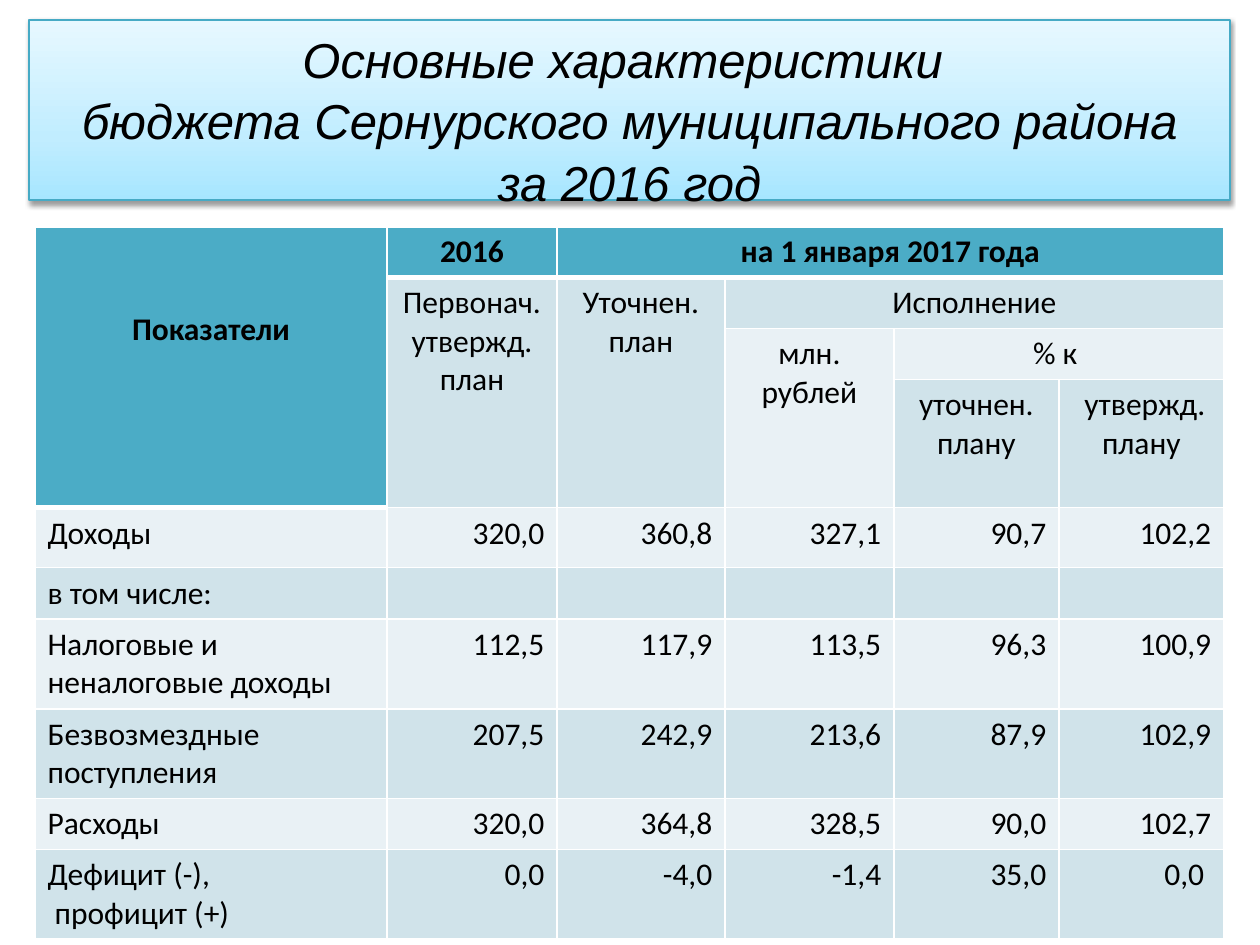
from copy import deepcopy
from dataclasses import dataclass

from lxml import etree
from pptx import Presentation
from pptx.dml.color import RGBColor
from pptx.enum import shapes, text
from pptx.oxml import ns
from pptx.util import Pt

PX = 914400 // 126
HEAD, DARK, LIGHT = "4BACC6", "D0E3EA", "E9F1F5"
LEFT, MID, RIGHT = text.PP_ALIGN.LEFT, text.PP_ALIGN.CENTER, text.PP_ALIGN.RIGHT
COLS = [352, 170, 168, 169, 165, 165]
ROWS = [50, 51, 51, 128, 60, 51, 90, 89, 51, 89]


@dataclass
class Head:
    row: int
    col: int
    words: str
    fill: str
    down: int = 1
    across: int = 1
    top: int = 6


HEADS = [
    Head(0, 0, "Показатели", HEAD, down=4, top=83),
    Head(0, 1, "2016", HEAD),
    Head(0, 2, "на 1 января 2017 года", HEAD, across=4),
    Head(1, 1, "Первонач. утвержд. план", DARK, down=3),
    Head(1, 2, "Уточнен.\nплан", DARK, down=3),
    Head(1, 3, "Исполнение", DARK, across=3),
    Head(2, 3, "млн. рублей", LIGHT, down=2),
    Head(2, 4, "% к ", LIGHT, across=2),
    Head(3, 4, "уточнен. плану", DARK),
    Head(3, 5, " утвержд. плану", DARK),
]
BODY = [
    ("Доходы", "320,0", "360,8", "327,1", "90,7", "102,2"),
    ("в том числе:", "", "", "", "", ""),
    ("Налоговые и неналоговые доходы", "112,5", "117,9", "113,5", "96,3", "100,9"),
    ("Безвозмездные поступления", "207,5", "242,9", "213,6", "87,9", "102,9"),
    ("Расходы", "320,0", "364,8", "328,5", "90,0", "102,7"),
    ("Дефицит (-),\n профицит (+)", "0,0", "-4,0", "-1,4", "35,0", "0,0 "),
]


def rgb(code: str) -> RGBColor:
    return RGBColor.from_string(code)


def sub(node, tag: str, **attrs):
    return etree.SubElement(node, ns.qn(tag), attrs)


def write(frame, words: str, size=18, font="Calibri", bold=False,
          italic=False, align=MID, space=None) -> None:
    for i, line in enumerate(words.split("\n")):
        para = frame.add_paragraph() if i else frame.paragraphs[0]
        para.alignment, para.line_spacing = align, space
        para.font.size = Pt(size)
        if line:
            run = para.add_run()
            run.text = line
            run.font.size, run.font.name = Pt(size), font
            run.font.bold, run.font.italic = bold, italic
            run.font.color.rgb = rgb("000000")


def edge(cell, base: int) -> None:
    """White cell borders; base is the width of the bottom one in points."""
    props = cell._tc.get_or_add_tcPr()
    for i, side in enumerate("LRTB"):
        line = sub(props, f"a:ln{side}", w=str(Pt(base if side == "B" else 1)))
        sub(sub(line, "a:solidFill"), "a:srgbClr", val="FFFFFF")
        props.insert(i, line)


def paint(cell, fill: str) -> None:
    cell.fill.solid()
    cell.fill.fore_color.rgb = rgb(fill)


def banner(slide) -> None:
    box = slide.shapes.add_shape(shapes.MSO_SHAPE.RECTANGLE,
                                 29 * PX, 20 * PX, 1201 * PX, 180 * PX)
    box.line.color.rgb, box.line.width = rgb("46AAC5"), Pt(0.75)
    # Three-stop gradient, palest at the top
    box.fill.gradient()
    box.fill.gradient_angle = 90
    stops = box._element.spPr.find(ns.qn("a:gradFill")).find(ns.qn("a:gsLst"))
    stops.insert(1, deepcopy(stops[0]))
    shades = [(0, "A7E6FF"), (0.35, "C1EDFF"), (1, "E7F8FF")]
    for stop, (place, shade) in zip(box.fill.gradient_stops, shades):
        stop.position, stop.color.rgb = place, rgb(shade)
    # Soft shadow below
    box.shadow.inherit = False
    glow = sub(box._element.spPr.find(ns.qn("a:effectLst")), "a:outerShdw",
               blurRad=str(Pt(3.1)), dist=str(Pt(1.6)), dir="5400000", rotWithShape="0")
    sub(sub(glow, "a:srgbClr", val="000000"), "a:alpha", val="38000")
    frame = box.text_frame
    frame.word_wrap = False
    frame.vertical_anchor = text.MSO_ANCHOR.TOP
    write(frame, "Основные характеристики \nбюджета Сернурского муниципального района\n"
          "за 2016 год", size=28, font="Arial", italic=True, space=1.05)


def budget(slide) -> None:
    grid = slide.shapes.add_table(len(ROWS), len(COLS), 35 * PX, 227 * PX,
                                  sum(COLS) * PX, sum(ROWS) * PX).table
    for col, wide in zip(grid.columns, COLS):
        col.width = wide * PX
    for row, high in zip(grid.rows, ROWS):
        row.height = high * PX
    # Borders, heavier under the header cells
    for r in range(len(ROWS)):
        for c in range(len(COLS)):
            edge(grid.cell(r, c), 3 if r == 0 or (c == 0 and r < 4) else 1)
    # Header cells
    for h in HEADS:
        cell = grid.cell(h.row, h.col)
        if h.down * h.across > 1:
            cell.merge(grid.cell(h.row + h.down - 1, h.col + h.across - 1))
        cell.margin_top = h.top * PX
        paint(cell, h.fill)
        write(cell.text_frame, h.words, bold=h.row == 0)
    # Figures
    for r, line in enumerate(BODY):
        for c, words in enumerate(line):
            cell = grid.cell(r + 4, c)
            paint(cell, DARK if r % 2 else LIGHT)
            write(cell.text_frame, words, align=RIGHT if c else LEFT)


def main() -> None:
    deck = Presentation()
    deck.slide_width, deck.slide_height = 1260 * PX, 945 * PX
    slide = deck.slides.add_slide(deck.slide_layouts[6])
    budget(slide)
    banner(slide)
    deck.save("out.pptx")


if __name__ == "__main__":
    main()
